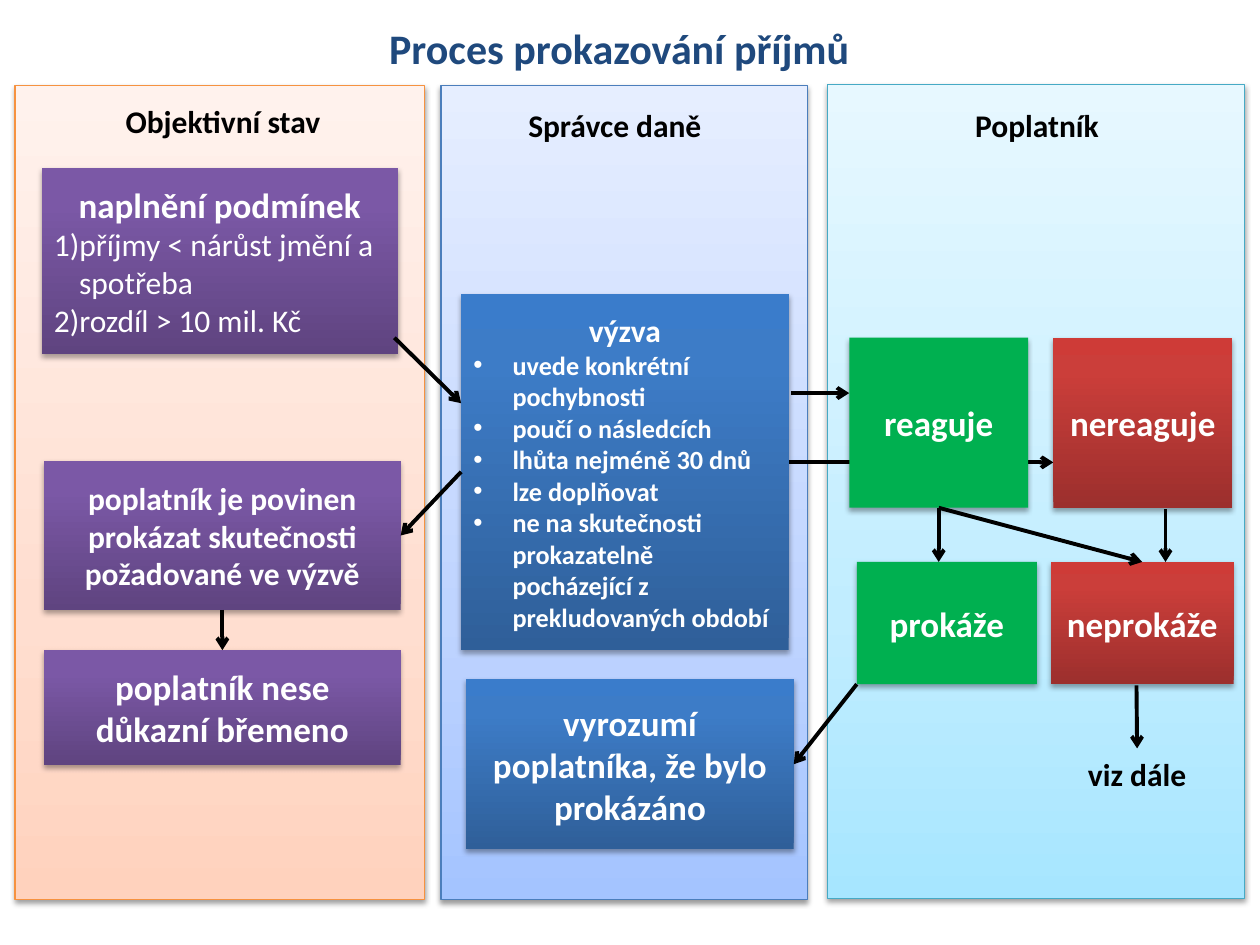
from pptx import Presentation
from pptx.dml.color import RGBColor
from pptx.enum.shapes import MSO_CONNECTOR, MSO_SHAPE
from pptx.enum.text import MSO_ANCHOR, PP_ALIGN
from pptx.oxml import parse_xml
from pptx.oxml.ns import nsdecls
from pptx.util import Inches, Pt

RECT, STRAIGHT = MSO_SHAPE.RECTANGLE, MSO_CONNECTOR.STRAIGHT
CENTER, LEFT = PP_ALIGN.CENTER, PP_ALIGN.LEFT
TOP, MIDDLE = MSO_ANCHOR.TOP, MSO_ANCHOR.MIDDLE
TOP_SIDE, LEFT_SIDE, BOTTOM_SIDE, RIGHT_SIDE = range(4)

THEME = {
    "font": "Calibri",
    "title": "1F497D", "dark": "000000", "light": "FFFFFF",
    "size_title": 24, "size_large": 20, "size_medium": 18, "size_small": 15,
    "arrow_width": 2.25, "panel_width": 0.75,
    # Gradients run from bottom to top: (position in %, colour)
    "orange": [(0, "FFD2BD"), (35, "FFDED0"), (100, "FFF2ED")],
    "pale_blue": [(0, "A4C4FF"), (35, "BFD4FF"), (100, "E6EEFF")],
    "cyan": [(0, "A7E6FF"), (35, "C1EDFF"), (100, "E7F8FF")],
    "purple": [(0, "5F4480"), (80, "7B58A6"), (100, "7C57A8")],
    "blue": [(0, "2F5F99"), (80, "3D7CC7"), (100, "3A7CCB")],
    "red": [(0, "9C2F2D"), (80, "CB3E3A"), (100, "CE3B37")],
    "green": "00B050",
    # Shadows: opacity in %, blur and distance in points
    "panel_shadow": (38, 3.1, 1.6), "box_shadow": (35, 3.1, 1.8),
}
LARGE, MEDIUM, SMALL = (THEME["size_" + s] for s in ("large", "medium", "small"))

# Content
TITLE = ("Proces prokazování příjmů", (1.46, 0.13, 6.91, 0.5))

# Place, fill, outline
PANELS = [
    ((6.57, 0.67, 3.31, 6.46), "cyan", "46AAC5"),
    ((3.5, 0.68, 2.91, 6.46), "pale_blue", "4B7EBC"),
    ((0.12, 0.68, 3.25, 6.46), "orange", "F69240"),
]

LABELS = {
    "Objektivní stav": (0.51, 0.76, 2.52, 0.37),
    "Správce daně": (3.62, 0.79, 2.52, 0.37),
    "Poplatník": (6.97, 0.79, 2.52, 0.37),
    "viz dále": (8.26, 5.94, 1.53, 0.4),
}

# Heading, place, fill, size
BOXES = [
    ("naplnění podmínek", (0.33, 1.33, 2.83, 1.48), "purple", LARGE),
    ("výzva", (3.66, 2.33, 2.6, 2.83), "blue", MEDIUM),
    ("nereaguje", (8.36, 2.68, 1.42, 1.35), "red", LARGE),
    ("prokáže", (6.8, 4.46, 1.43, 0.97), "green", LARGE),
    ("neprokáže", (8.34, 4.46, 1.45, 0.97), "red", LARGE),
    ("poplatník je povinen prokázat skutečnosti požadované ve výzvě",
     (0.35, 3.66, 2.83, 1.18), "purple", MEDIUM),
    ("reaguje", (6.74, 2.68, 1.42, 1.35), "green", LARGE),
    ("vyrozumí poplatníka, že bylo prokázáno", (3.7, 5.39, 2.6, 1.35), "blue", LARGE),
    ("poplatník nese důkazní břemeno", (0.35, 5.16, 2.83, 0.91), "purple", LARGE),
]
CONDITIONS, CALL = BOXES[0][0], BOXES[1][0]
DUTY, NOTICE, BURDEN = BOXES[5][0], BOXES[7][0], BOXES[8][0]

NUMBERED = '<a:buFont %s typeface="+mj-lt"/>', '<a:buAutoNum %s type="arabicParenR"/>'
BULLETED = '<a:buFont %s typeface="Arial"/>', '<a:buChar %s char="•"/>'

# Items under a heading, with their list format
LISTS = {
    CONDITIONS: (
        ["příjmy < nárůst jmění a spotřeba", "rozdíl > 10 mil. Kč"],
        {"size": MEDIUM, "bold": False, "bullet": NUMBERED, "indent": 0.2}),
    CALL: (
        ["uvede konkrétní pochybnosti", "poučí o následcích",
         "lhůta nejméně 30 dnů", "lze doplňovat",
         "ne na skutečnosti prokazatelně pocházející z prekludovaných období"],
        {"size": SMALL, "bullet": BULLETED, "indent": 0.31}),
}

# An end is a point or a (box, side) pair
ARROW_BEHIND_BOXES = ((6.25, 3.67), (8.36, 3.67))
ARROWS = [
    (("reaguje", BOTTOM_SIDE), (7.45, 4.46)),
    (("reaguje", BOTTOM_SIDE), ("neprokáže", TOP_SIDE)),
    ((6.28, 3.12), (6.74, 3.12)),
    ((6.8, 5.43), (NOTICE, RIGHT_SIDE)),
    ((CALL, LEFT_SIDE), (DUTY, RIGHT_SIDE)),
    ((3.13, 2.68), (3.66, 3.2)),
    ((DUTY, BOTTOM_SIDE), (BURDEN, TOP_SIDE)),
    ((9.02, 5.44), ("viz dále", TOP_SIDE)),
    ((9.25, 4.04), (9.25, 4.46)),
]


def write(frame, text, *, size, color, bold=True, align=CENTER, anchor=TOP,
          bullet=None, indent=0, new=False):
    """Write one paragraph, the first of the frame unless new is set."""
    frame.word_wrap = True
    frame.vertical_anchor = anchor
    paragraph = frame.add_paragraph() if new else frame.paragraphs[0]
    paragraph.alignment = align
    run = paragraph.add_run()
    run.text = text
    run.font.name, run.font.size, run.font.bold = THEME["font"], Pt(size), bold
    run.font.color.rgb = RGBColor.from_string(color)
    if bullet:
        properties = paragraph._p.get_or_add_pPr()
        properties.set("marL", str(Inches(indent)))
        properties.set("indent", str(-Inches(indent)))
        for part in bullet:
            properties.append(parse_xml(part % nsdecls("a")))


def add_block(shapes, place, fill, shadow, outline=None):
    block = shapes.add_shape(RECT, *map(Inches, place))
    if outline:
        block.line.color.rgb = RGBColor.from_string(outline)
        block.line.width = Pt(THEME["panel_width"])
    else:
        block.line.fill.background()
    # Fill
    colors = THEME[fill]
    block.fill.solid()
    if isinstance(colors, str):
        block.fill.fore_color.rgb = RGBColor.from_string(colors)
    else:
        stops = "".join(f'<a:gs pos="{pos * 1000}"><a:srgbClr val="{color}"/></a:gs>'
                        for pos, color in colors)
        properties = block._element.spPr
        properties.replace(properties.solidFill, parse_xml(
            f'<a:gradFill {nsdecls("a")} rotWithShape="1"><a:gsLst>{stops}</a:gsLst>'
            '<a:lin ang="16200000" scaled="0"/></a:gradFill>'))
    # Shadow
    block.shadow.inherit = False
    opacity, blur, distance = THEME[shadow]
    block._element.spPr.effectLst.append(parse_xml(
        f'<a:outerShdw {nsdecls("a")} blurRad="{Pt(blur)}" dist="{Pt(distance)}" '
        'dir="5400000" rotWithShape="0"><a:srgbClr val="000000">'
        f'<a:alpha val="{opacity * 1000}"/></a:srgbClr></a:outerShdw>'))
    return block


def add_arrow(shapes, start, end, nodes):
    points = [(0, 0) if isinstance(spot[0], str) else spot for spot in (start, end)]
    arrow = shapes.add_connector(STRAIGHT, *(Inches(v) for point in points for v in point))
    for spot, connect in ((start, arrow.begin_connect), (end, arrow.end_connect)):
        if isinstance(spot[0], str):
            connect(nodes[spot[0]], spot[1])
    arrow.line.color.rgb = RGBColor.from_string(THEME["dark"])
    arrow.line.width = Pt(THEME["arrow_width"])
    arrow.line._get_or_add_ln().append(parse_xml(f'<a:tailEnd {nsdecls("a")} type="arrow"/>'))
    arrow._element.spPr.append(parse_xml(f'<a:effectLst {nsdecls("a")}/>'))


def main():
    deck = Presentation()
    deck.slide_width, deck.slide_height = Inches(10), Inches(7.5)
    slide = deck.slides.add_slide(deck.slide_layouts[5])
    shapes, nodes = slide.shapes, {}

    # Title
    text, place = TITLE
    title = shapes.title
    title.left, title.top, title.width, title.height = map(Inches, place)
    write(title.text_frame, text, size=THEME["size_title"], color=THEME["title"], anchor=MIDDLE)

    # Columns and labels
    for place, fill, outline in PANELS:
        add_block(shapes, place, fill, "panel_shadow", outline)
    for text, place in LABELS.items():
        nodes[text] = shapes.add_textbox(*map(Inches, place))
        write(nodes[text].text_frame, text, size=MEDIUM, color=THEME["dark"])

    # Process steps
    add_arrow(shapes, *ARROW_BEHIND_BOXES, nodes)
    for heading, place, fill, size in BOXES:
        nodes[heading] = add_block(shapes, place, fill, "box_shadow")
        frame = nodes[heading].text_frame
        write(frame, heading, size=size, color=THEME["light"], anchor=MIDDLE)
        items, list_format = LISTS.get(heading, ([], {}))
        for item in items:
            write(frame, item, color=THEME["light"], align=LEFT, anchor=MIDDLE,
                  new=True, **list_format)

    # Arrows
    for start, end in ARROWS:
        add_arrow(shapes, start, end, nodes)

    deck.save("out.pptx")


if __name__ == "__main__":
    main()
